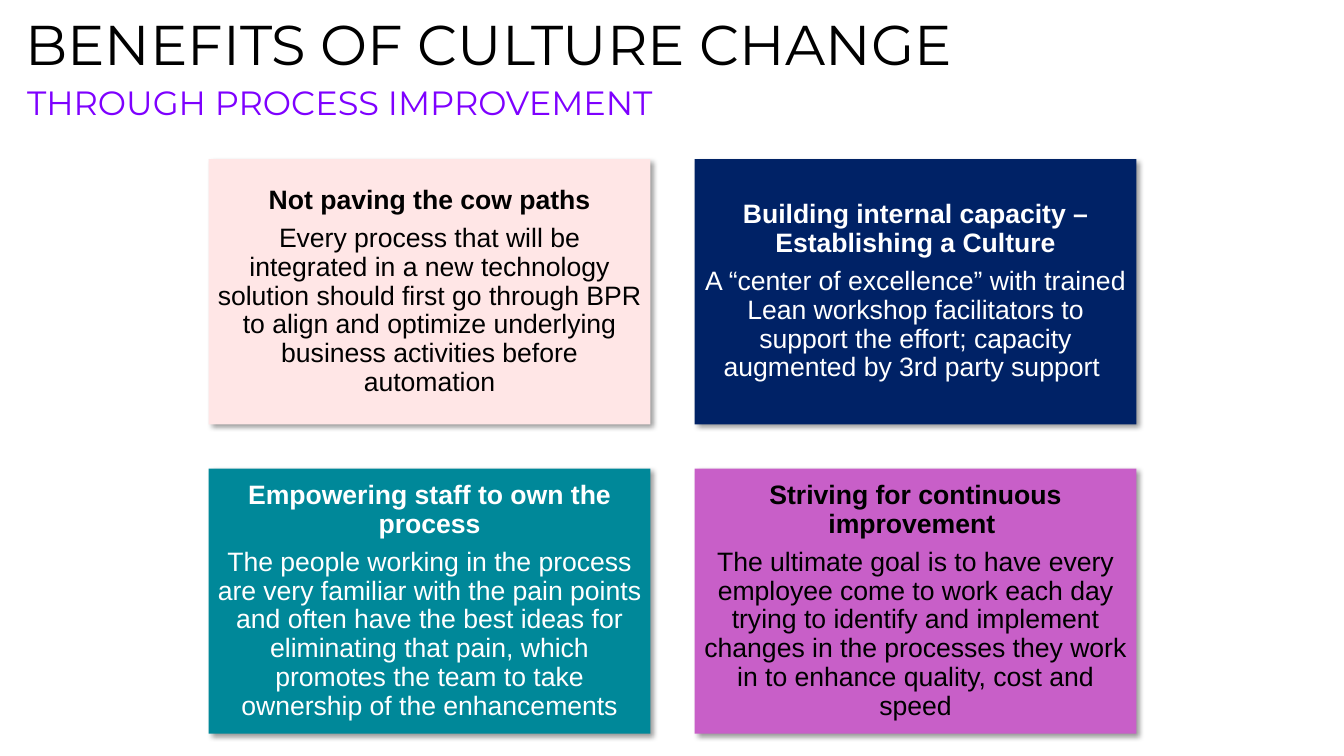
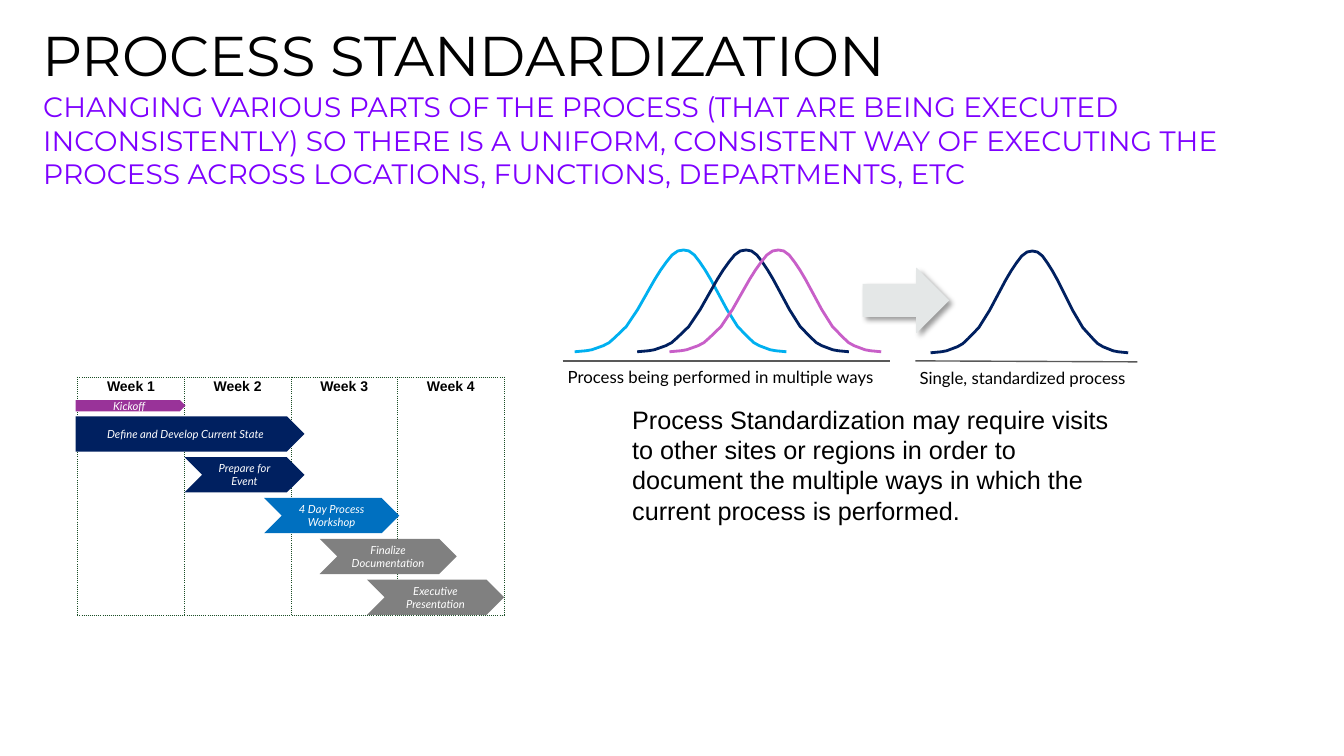
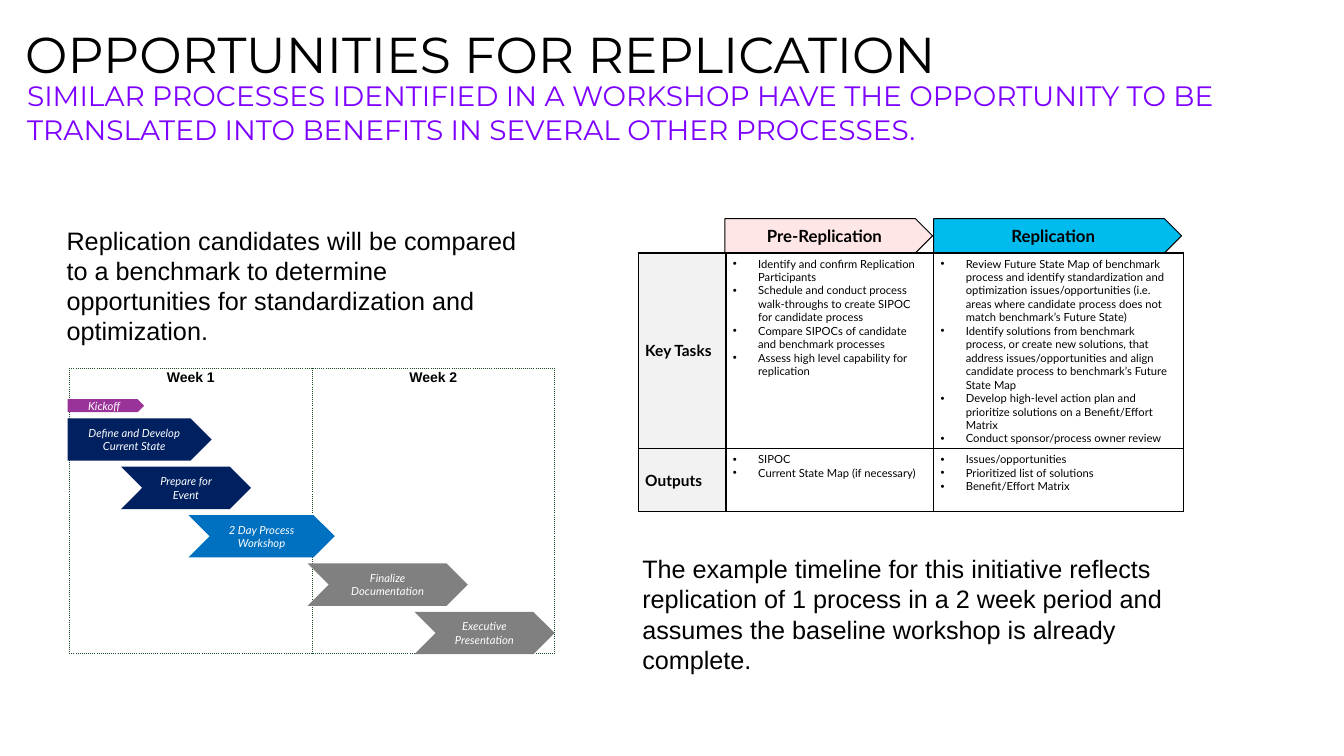
from itertools import product
from lxml import etree
from pptx import Presentation
from pptx.dml.color import RGBColor
from pptx.enum.dml import MSO_LINE as Dash
from pptx.enum.shapes import MSO_CONNECTOR as Link, MSO_SHAPE as Kind
from pptx.enum.text import MSO_ANCHOR as Anchor, MSO_AUTO_SIZE as Fit, PP_ALIGN as Align
from pptx.oxml import parse_xml
from pptx.oxml.ns import qn, nsdecls
from pptx.util import Emu, Inches, Pt

WIDE, HIGH = 13.33, 7.5
BLACK, WHITE, PURPLE, NAVY, GRAY = "000000", "FFFFFF", "7E00FF", "002060", "808080"
PINK, ORCHID, GREEN, RULE = "FFE6E6", "C85FC8", "1A4E26", "595959"
HEAD, BODY, NOTE = "Montserrat", "Arial", "Lato"

CARDS = [
    ("Not paving the cow paths",
     "Every process that will be integrated in a new technology solution should first go through BPR "
     "to align and optimize underlying business activities before automation", PINK, BLACK),
    ("Building internal capacity – Establishing a Culture",
     "A “center of excellence” with trained Lean workshop facilitators to support the effort; "
     "capacity augmented by 3rd party support ", "002266", WHITE),
    ("Empowering staff to own the process",
     "The people working in the process are very familiar with the pain points and often have the best "
     "ideas for eliminating that pain, which promotes the team to take ownership of the enhancements",
     "008899", WHITE),
    ("Striving for continuous improvement ",
     "The ultimate goal is to have every employee come to work each day trying to identify and implement "
     "changes in the processes they work in to enhance quality, cost and speed", ORCHID, BLACK),
]

STEPS = [
    ("Define and Develop Current State", Kind.PENTAGON, NAVY),
    ("Prepare for Event", Kind.CHEVRON, NAVY),
    ("{} Day Process Workshop", Kind.CHEVRON, "0070C0"),
    ("Finalize Documentation", Kind.CHEVRON, GRAY),
    ("Executive Presentation", Kind.CHEVRON, GRAY),
]
MONTH = dict(
    weeks=4, days=4, grid=(0.77, 3.74, 4.23, 2.36), kick=(0.75, 3.97, 1.09, 0.11),
    top=4.13, step=0.405, tall=0.35,
    spans=[(0.75, 2.27), (1.83, 1.19), (2.62, 1.34), (3.17, 1.36), (3.64, 1.36)])
PAIR = dict(
    weeks=2, days=2, grid=(0.69, 3.65, 4.81, 2.83), kick=(0.67, 3.96, 0.76, 0.13),
    top=4.15, step=0.48, tall=0.42,
    spans=[(0.67, 1.43), (1.2, 1.29), (1.87, 1.45), (3.05, 1.59), (4.11, 1.39)])

BELL_X = [0, 1, 2, 3, 4, 5, 6, 8, 10, 12, 13, 14, 15, 16, 17, 19]
BELL_Y = [0, 0.01, 0.05, 0.12, 0.2, 0.29, 0.39, 0.59, 0.76, 0.87, 0.92, 0.95, 0.97, 0.99, 1, 1.01]
BELLS = [(6.78, 2.48, 1.08, 1.02, "00B0F0"), (7.4, 2.48, 1.08, 1.02, NAVY),
         (7.72, 2.48, 1.08, 1.02, ORCHID), (10.24, 2.49, 1.01, 0.95, NAVY)]

PHASES = [("Pre-Replication", 7.19, 2.06, PINK), ("Replication", 9.26, 2.46, "00BBEE")]
TASKS = [
    ("Key Tasks",
     ["Identify and confirm Replication Participants",
      "Schedule and conduct process walk-throughs to create SIPOC for candidate process",
      "Compare SIPOCs of candidate and benchmark processes",
      "Assess high level capability for replication"],
     ["Review Future State Map of benchmark process and identify standardization and optimization "
      "issues/opportunities (i.e. areas where candidate process does not match benchmark’s Future State)",
      "Identify solutions from benchmark process, or create new solutions, that address "
      "issues/opportunities and align candidate process to benchmark’s Future State Map",
      "Develop high-level action plan and prioritize solutions on a Benefit/Effort Matrix",
      "Conduct sponsor/process owner review"]),
    ("Outputs",
     ["SIPOC", "Current State Map (if necessary)"],
     ["Issues/opportunities", "Prioritized list of solutions", "Benefit/Effort Matrix"]),
]


def tint(code):
    return RGBColor.from_string(code)


def box(*sizes):
    return [Inches(size) for size in sizes]


def write(frame, lines, size, font=BODY, color=BLACK, bold=False, slant=False,
          align=Align.LEFT, gap=None, after=0):
    frame.text = "\n".join(lines)
    for para in frame.paragraphs:
        para.alignment, para.line_spacing, para.space_after = align, gap, Pt(after)
        for run in para.runs:
            face = run.font
            face.name, face.size, face.bold, face.italic = font, Pt(size), bold, slant
            face.color.rgb = tint(color)


def inset(part, left, top, right, low):
    part.margin_left, part.margin_top, part.margin_right, part.margin_bottom = box(left, top, right, low)


def label(slide, text, place, size, pad=0.04, **look):
    frame = slide.shapes.add_textbox(*box(*place)).text_frame
    frame.word_wrap = True
    inset(frame, pad, 0.05 if pad > 0.05 else pad, pad, 0.04)
    write(frame, [text], size, **look)
    return frame


def shade(shape):
    shape._element.spPr.append(parse_xml(
        f'<a:effectLst {nsdecls("a")}><a:outerShdw blurRad="{Pt(4)}" dist="{Pt(3)}" dir="2700000" '
        'algn="tl" rotWithShape="0"><a:srgbClr val="000000"><a:alpha val="40000"/></a:srgbClr>'
        '</a:outerShdw></a:effectLst>'))


def block(slide, kind, place, fill, edge=None, wide=0.75, soft=False):
    shape = slide.shapes.add_shape(kind, *box(*place))
    shape.fill.solid()
    shape.fill.fore_color.rgb = tint(fill)
    if edge:
        shape.line.color.rgb, shape.line.width = tint(edge), Pt(wide)
    else:
        shape.line.fill.background()
    if soft:
        shade(shape)
    else:
        shape.shadow.inherit = False
    return shape


def fill_in(shape, lines, size, pad=0.08, **look):
    frame = shape.text_frame
    frame.word_wrap, frame.vertical_anchor = True, Anchor.MIDDLE
    inset(frame, pad, pad, pad, pad)
    write(frame, lines, size, align=Align.CENTER, **look)
    return frame


def begin(deck, title, place, size, sub, spot, small):
    slide = deck.slides.add_slide(deck.slide_layouts[5])
    head = slide.shapes.title
    head.left, head.top, head.width, head.height = box(*place)
    frame = head.text_frame
    frame.word_wrap, frame.auto_size, frame.vertical_anchor = True, Fit.NONE, Anchor.TOP
    inset(frame, 0, 0.05, 0, 0)
    write(frame, [title], size, font=HEAD, gap=0.7)
    return slide, label(slide, sub, spot, small, pad=0.1, font=HEAD, color=PURPLE)


def border(cell, color, wide, dash):
    props = cell._tc.get_or_add_tcPr()
    for spot, side in enumerate(("lnL", "lnR", "lnT", "lnB")):
        props.insert(spot, parse_xml(
            f'<a:{side} {nsdecls("a")} w="{Pt(wide)}"><a:solidFill><a:srgbClr val="{color}"/></a:solidFill>'
            f'<a:prstDash val="{dash}"/></a:{side}>'))


def table(slide, place, cols, rows, color, wide, dash):
    grid = slide.shapes.add_table(len(rows), len(cols), *box(*place)).table
    grid.first_row = grid.horz_banding = False
    for part, size in zip(grid.columns, cols):
        part.width = Inches(size)
    for part, size in zip(grid.rows, rows):
        part.height = Inches(size)
    for cell in grid.iter_cells():
        cell.fill.background()
        border(cell, color, wide, dash)
    return grid


def gantt(slide, weeks, days, grid, kick, top, step, tall, spans):
    plan = table(slide, grid, [grid[2] / weeks] * weeks, [grid[3]], GREEN, 0.5, "sysDot")
    for num, cell in enumerate(plan.iter_cells(), 1):
        inset(cell, 0, 0.04, 0, 0)
        write(cell.text_frame, [f"Week {num}"], 10, bold=True, align=Align.CENTER, gap=0.85)
    bars = [("Kickoff", Kind.PENTAGON, "993399", kick)]
    for row, ((text, kind, fill), (left, wide)) in enumerate(zip(STEPS, spans)):
        bars.append((text.format(days), kind, fill, (left, top + row * step, wide, tall)))
    for text, kind, fill, place in bars:
        fill_in(block(slide, kind, place, fill), [text], 8, font=NOTE, color=WHITE, slant=True, after=3)


def bell(slide, peak, top, left, right, color):
    half = list(zip(BELL_X, BELL_Y))
    dots = [(peak - left * x / 19, top + y) for x, y in reversed(half)]
    dots += [(peak + right * x / 19, top + y) for x, y in half[1:]]
    dots = [box(*dot) for dot in dots]
    pen = slide.shapes.build_freeform(*dots[0])
    pen.add_line_segments(dots[1:], close=False)
    curve = pen.convert_to_shape()
    curve.fill.background()
    curve.line.color.rgb, curve.line.width = tint(color), Pt(2)
    curve.shadow.inherit = False


def rule(slide, *ends):
    line = slide.shapes.add_connector(Link.STRAIGHT, *box(*ends))
    line.line.color.rgb, line.line.width = tint(RULE), Pt(1)
    etree.SubElement(line._element.spPr, qn("a:effectLst"))


def bullet(frame):
    for para in frame.paragraphs:
        props = para._p.get_or_add_pPr()
        props.set("marL", str(Inches(0.25)))
        props.set("indent", str(-Inches(0.25)))
        etree.SubElement(props, qn("a:buFont")).set("typeface", BODY)
        etree.SubElement(props, qn("a:buChar")).set("char", "•")


def benefits(deck):
    slide, sub = begin(deck, "BENEFITS OF CULTURE CHANGE", (0.25, 0.23, 10.48, 0.58), 40,
                       "THROUGH PROCESS IMPROVEMENT", (0.11, 0.83, 12.68, 0.8), 24)
    lead = sub.paragraphs[0]
    lead.line_spacing, lead.space_after = 0.85, Pt(12)
    lead._p.get_or_add_pPr().set("marL", str(Inches(0.06)))
    wide, tall, gap = 4.38, 2.63, 0.44
    for (row, col), (name, text, fill, ink) in zip(product(range(2), repeat=2), CARDS):
        place = 2.07 + col * (wide + gap), 1.58 + row * (tall + gap), wide, tall
        card = block(slide, Kind.RECTANGLE, place, fill, soft=True)
        frame = fill_in(card, [name, text], 19, color=ink, gap=0.9, after=6.65)
        frame.paragraphs[0].runs[0].font.bold = True


def standard(deck):
    slide, _ = begin(
        deck, "PROCESS STANDARDIZATION", (0.42, 0.34, 10.44, 0.58), 40,
        "CHANGING VARIOUS PARTS OF THE PROCESS (THAT ARE BEING EXECUTED INCONSISTENTLY) SO THERE IS A "
        "UNIFORM, CONSISTENT WAY OF EXECUTING THE PROCESS ACROSS LOCATIONS, FUNCTIONS, DEPARTMENTS, ETC",
        (0.33, 0.84, 12.77, 1.11), 20)
    gantt(slide, **MONTH)
    for curve in BELLS:
        bell(slide, *curve)
    rule(slide, 5.58, 3.58, 8.83, 3.58)
    rule(slide, 9.08, 3.58, 11.28, 3.59)
    block(slide, Kind.RIGHT_ARROW, (8.56, 2.66, 0.85, 0.64), "E4E7E7", "E4E7E7", 0.5, soft=True)
    label(slide, "Process being performed in multiple ways", (5.59, 3.6, 3.46, 0.28), 12, font=NOTE)
    label(slide, "Single, standardized process", (9.08, 3.61, 2.41, 0.28), 12, font=NOTE)
    label(slide, "Process Standardization may require visits to other sites or regions in order to "
          "document the multiple ways in which the current process is performed.",
          (6.23, 3.97, 4.99, 1.29), 18)


def replicate(deck):
    slide, _ = begin(
        deck, "OPPORTUNITIES FOR REPLICATION", (0.25, 0.34, 10.44, 0.58), 36,
        "SIMILAR PROCESSES IDENTIFIED IN A WORKSHOP HAVE THE OPPORTUNITY TO BE TRANSLATED INTO "
        "BENEFITS IN SEVERAL OTHER PROCESSES.", (0.17, 0.73, 12.33, 0.77), 20)
    gantt(slide, **PAIR)
    label(slide, "Replication candidates will be compared to a benchmark to determine opportunities "
          "for standardization and optimization.", (0.62, 2.19, 4.69, 1.29), 18)
    for name, left, wide, fill in PHASES:
        head = block(slide, Kind.PENTAGON, (left, 2.17, wide, 0.34), fill, BLACK)
        fill_in(head, [name], 12, pad=0.01, font=NOTE, bold=True, after=3.8)
    grid = table(slide, (6.33, 2.51, 5.41, 2.56), [0.87, 2.06, 2.48], [1.94, 0.62], BLACK, 1, "solid")
    for row, (name, *lists) in enumerate(TASKS):
        side = grid.cell(row, 0)
        side.fill.solid()
        side.fill.fore_color.rgb = tint("F2F2F2")
        side.vertical_anchor = Anchor.MIDDLE
        inset(side, 0.07, 0.04, 0.07, 0.04)
        write(side.text_frame, [name], 11, font=NOTE, bold=True)
        for col, items in enumerate(lists, 1):
            cell = grid.cell(row, col)
            inset(cell, 0.07, 0.04, 0.07, 0.04)
            write(cell.text_frame, items, 8, font=NOTE)
            bullet(cell.text_frame)
    label(slide, "The example timeline for this initiative reflects replication of 1 process in a 2 week "
          "period and assumes the baseline workshop is already complete.", (6.33, 5.45, 5.42, 1.59), 18)


def main():
    deck = Presentation()
    deck.slide_width, deck.slide_height = box(WIDE, HIGH)
    for build in (benefits, standard, replicate):
        build(deck)
    deck.save("out.pptx")


if __name__ == "__main__":
    main()
